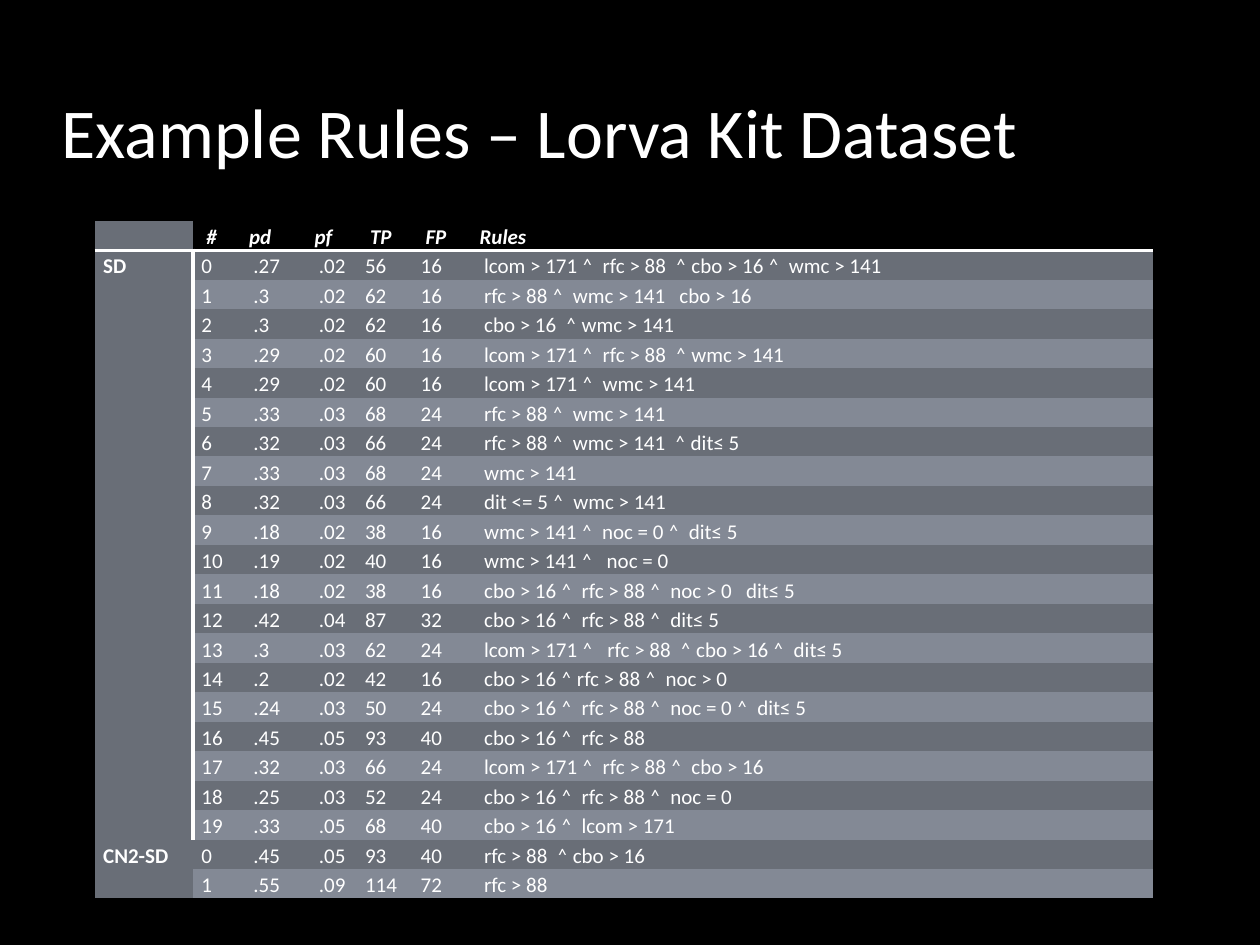
from dataclasses import dataclass

from lxml.etree import SubElement
from pptx import Presentation
from pptx.dml.color import RGBColor
from pptx.enum.text import MSO_ANCHOR, PP_ALIGN
from pptx.oxml import parse_xml
from pptx.oxml.ns import nsdecls, qn
from pptx.util import Cm, Pt


@dataclass(frozen=True)
class Theme:
    """Colours, font and type sizes of the slide."""
    font: str = "Calibri"
    title_size: int = 40
    table_size: int = 12
    back: str = "000000"
    text: str = "FFFFFF"
    dark: str = "696E77"
    light: str = "838995"


THEME = Theme()
NO_GRID_STYLE = "{2D5ABB26-0587-4C30-8999-92F81FD0307C}"
COL_WIDTHS = (1.98, 0.86, 1.32, 1.12, 1.12, 1.09, 13.85)
INSET, HEADER_INDENT, VALUE_INDENT = 0.17, 0.1, 0.19
INDENTED_COLS = (2, 3, 6)
HEADERS = ("#", "pd", "pf", "TP", "FP", "Rules")
GROUPS = {
    "SD": [
        (".27", ".02", "56", "16", "lcom > 171 ˄  rfc > 88  ˄ cbo > 16 ˄  wmc > 141"),
        (".3", ".02", "62", "16", "rfc > 88 ˄  wmc > 141   cbo > 16"),
        (".3", ".02", "62", "16", "cbo > 16  ˄ wmc > 141"),
        (".29", ".02", "60", "16", "lcom > 171 ˄  rfc > 88  ˄ wmc > 141"),
        (".29", ".02", "60", "16", "lcom > 171 ˄  wmc > 141"),
        (".33", ".03", "68", "24", "rfc > 88 ˄  wmc > 141"),
        (".32", ".03", "66", "24", "rfc > 88 ˄  wmc > 141  ˄ dit≤ 5"),
        (".33", ".03", "68", "24", "wmc > 141"),
        (".32", ".03", "66", "24", "dit <= 5 ˄  wmc > 141"),
        (".18", ".02", "38", "16", "wmc > 141 ˄  noc = 0 ˄  dit≤ 5"),
        (".19", ".02", "40", "16", "wmc > 141 ˄   noc = 0"),
        (".18", ".02", "38", "16", "cbo > 16 ˄  rfc > 88 ˄  noc > 0   dit≤ 5"),
        (".42", ".04", "87", "32", "cbo > 16 ˄  rfc > 88 ˄  dit≤ 5"),
        (".3", ".03", "62", "24", "lcom > 171 ˄   rfc > 88  ˄ cbo > 16 ˄  dit≤ 5"),
        (".2", ".02", "42", "16", "cbo > 16 ˄ rfc > 88 ˄  noc > 0"),
        (".24", ".03", "50", "24", "cbo > 16 ˄  rfc > 88 ˄  noc = 0 ˄  dit≤ 5"),
        (".45", ".05", "93", "40", "cbo > 16 ˄  rfc > 88"),
        (".32", ".03", "66", "24", "lcom > 171 ˄  rfc > 88 ˄  cbo > 16"),
        (".25", ".03", "52", "24", "cbo > 16 ˄  rfc > 88 ˄  noc = 0"),
        (".33", ".05", "68", "40", "cbo > 16 ˄  lcom > 171"),
    ],
    "CN2-SD": [
        (".45", ".05", "93", "40", "rfc > 88  ˄ cbo > 16"),
        (".55", ".09", "114", "72", "rfc > 88"),
    ],
}


def set_font(p, size, bold=False, italic=False):
    """Format a whole paragraph in the theme font."""
    p.font.name = THEME.font
    p.font.size = Pt(size)
    p.font.bold = bold
    p.font.italic = italic
    p.font.color.rgb = RGBColor.from_string(THEME.text)


def add_border(cell, side):
    """Draw a white 2 pt line on one side of a cell."""
    tc_pr = cell._tc.get_or_add_tcPr()
    line = parse_xml(
        f'<a:{side} {nsdecls("a")} w="{Pt(2)}"><a:solidFill>'
        f'<a:srgbClr val="{THEME.text}"/></a:solidFill></a:{side}>')
    tc_pr.insert(0, line)


def fill_cell(cell, text, fill, indent=0, bold=False, italic=False):
    """Write and format one table cell."""
    cell.text = text
    cell.margin_left, cell.margin_right = Cm(INSET + indent), Cm(INSET)
    cell.margin_top = cell.margin_bottom = 0
    cell.fill.solid()
    cell.fill.fore_color.rgb = RGBColor.from_string(fill)
    p = cell.text_frame.paragraphs[0]
    p.line_spacing = 1.15
    set_font(p, THEME.table_size, bold, italic)
    if not text:
        SubElement(p._p, qn("a:endParaRPr"), sz=str(THEME.table_size * 100))


def add_title(s, text):
    """Place the title placeholder and format its text."""
    sp = s.shapes.title
    sp.left, sp.top, sp.width, sp.height = Cm(0.99), Cm(0.64), Cm(21.34), Cm(2.97)
    tf = sp.text_frame
    tf.text = text
    tf.vertical_anchor = MSO_ANCHOR.BOTTOM
    p = tf.paragraphs[0]
    p.alignment = PP_ALIGN.LEFT
    p.space_before = Pt(4)
    set_font(p, THEME.title_size)


def add_header(table):
    """Fill the header row and underline it."""
    for col, text in enumerate(("",) + HEADERS):
        cell = table.cell(0, col)
        fill_cell(cell, text, THEME.back if col else THEME.dark,
                  HEADER_INDENT, bold=True, italic=True)
        add_border(cell, "lnB")


def add_group(table, top, name, rules, ruled):
    """Fill one group of rules beside its merged name cell."""
    for i, rule in enumerate(rules):
        fill = THEME.light if i % 2 else THEME.dark
        for col, text in enumerate((str(i),) + rule, start=1):
            indent = VALUE_INDENT if col in INDENTED_COLS else 0
            fill_cell(table.cell(top + i, col), text, fill, indent)
        if ruled:
            add_border(table.cell(top + i, 0), "lnR")
    cell = table.cell(top, 0)
    cell.merge(table.cell(top + len(rules) - 1, 0))
    fill_cell(cell, name, THEME.dark, bold=True)


def add_rule_table(s):
    """Add the table with all groups of rules."""
    count = 1 + sum(len(rules) for rules in GROUPS.values())
    frame = s.shapes.add_table(count, len(COL_WIDTHS), Cm(1.91), Cm(4.45),
                               Cm(sum(COL_WIDTHS)), Cm(13.44))
    table = frame.table
    table.first_row = table.horz_banding = False
    table._tbl.tblPr.find(qn("a:tableStyleId")).text = NO_GRID_STYLE
    for column, width in zip(table.columns, COL_WIDTHS):
        column.width = Cm(width)
    add_header(table)
    top = 1
    for name, rules in GROUPS.items():
        add_group(table, top, name, rules, ruled=name == "SD")
        top += len(rules)


def main():
    """Build the slide and save it."""
    prs = Presentation()
    prs.slide_width, prs.slide_height = Cm(25.4), Cm(19.05)
    s = prs.slides.add_slide(prs.slide_layouts[5])
    s.background.fill.solid()
    s.background.fill.fore_color.rgb = RGBColor.from_string(THEME.back)
    add_rule_table(s)
    add_title(s, "Example Rules – Lorva Kit Dataset")
    prs.save("out.pptx")


if __name__ == "__main__":
    main()
